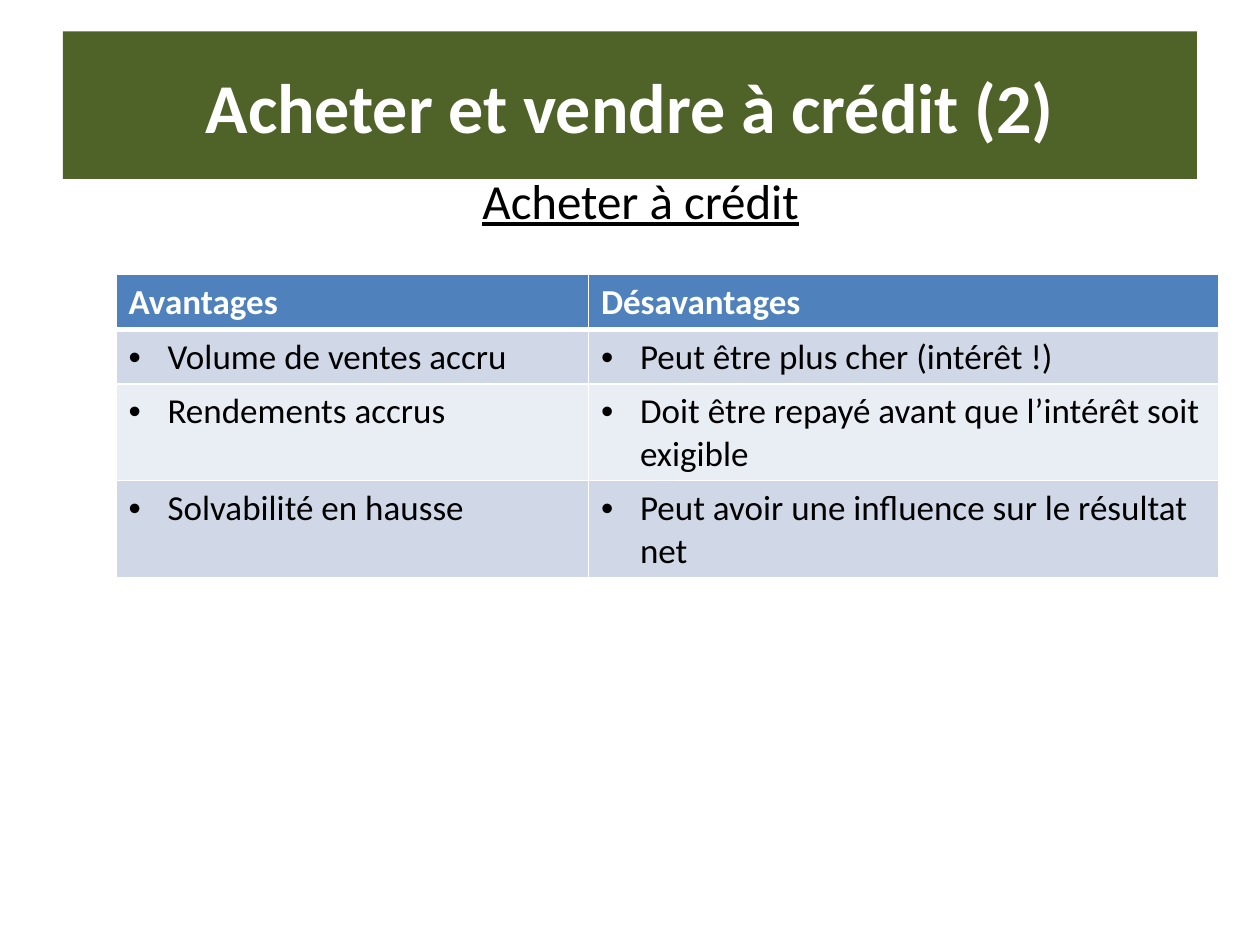
"""Build the slide on the advantages and drawbacks of buying on credit."""
from lxml import etree
from pptx import Presentation
from pptx.dml.color import RGBColor
from pptx.enum import shapes, text
from pptx.oxml import ns
from pptx.util import Inches, Pt

COLORS = {
    "banner": "4F6228",
    "header": "4F81BD",
    "odd": "D0D8E8",
    "even": "E9EDF4",
    "white": "FFFFFF",
    "black": "000000",
}
CREDIT_ROWS = [
    ("Avantages", "Désavantages"),
    ("Volume de ventes accru", "Peut être plus cher (intérêt !)"),
    ("Rendements accrus", "Doit être repayé avant que l’intérêt soit exigible"),
    ("Solvabilité en hausse", "Peut avoir une influence sur le résultat net"),
]


def add_run(paragraph, wording, size, color, bold=False):
    run = paragraph.add_run()
    run.text = wording
    run.font.name = "Calibri"
    run.font.size = Pt(size)
    run.font.bold = bold
    run.font.color.rgb = RGBColor.from_string(COLORS[color])
    return run


def add_border(cell, side, width):
    line = etree.SubElement(cell._tc.get_or_add_tcPr(), ns.qn(f"a:ln{side}"), w=str(Pt(width)))
    fill = etree.SubElement(line, ns.qn("a:solidFill"))
    etree.SubElement(fill, ns.qn("a:srgbClr"), val=COLORS["white"])


prs = Presentation()
prs.slide_width, prs.slide_height = Inches(10), Inches(7.5)
slide = prs.slides.add_slide(prs.slide_layouts[6])

banner = slide.shapes.add_shape(
    shapes.MSO_SHAPE.RECTANGLE, Inches(0.5), Inches(0.25), Inches(9), Inches(1.17)
)
banner.shadow.inherit = False
banner.fill.solid()
banner.fill.fore_color.rgb = RGBColor.from_string(COLORS["banner"])
banner.line.fill.background()
banner.text_frame.vertical_anchor = text.MSO_ANCHOR.MIDDLE
title = banner.text_frame.paragraphs[0]
title.alignment = text.PP_ALIGN.CENTER
add_run(title, "Acheter et vendre à crédit (2)", 40, "white", bold=True)

body = slide.shapes.add_textbox(Inches(0.5), Inches(1.3), Inches(9.17), Inches(5.62))
body.text_frame.word_wrap = True
subtitle = body.text_frame.paragraphs[0]
subtitle.alignment = text.PP_ALIGN.CENTER
add_run(subtitle, "Acheter à crédit", 28, "black").font.underline = True

credit_table = slide.shapes.add_table(
    len(CREDIT_ROWS), 2, Inches(0.92), Inches(2.18), Inches(8.75), Inches(1.64)
).table
for column, width in zip(credit_table.columns, (3.75, 5)):
    column.width = Inches(width)

for row, wordings in enumerate(CREDIT_ROWS):
    is_header = row == 0
    band = "header" if is_header else "odd" if row % 2 else "even"
    credit_table.rows[row].height = Inches(0.41)
    for col, wording in enumerate(wordings):
        cell = credit_table.cell(row, col)
        borders = {"L": 1, "R": 1, "T": 3 if row == 1 else 1, "B": 3 if is_header else 1}
        for side, width in borders.items():
            add_border(cell, side, width)
        cell.fill.solid()
        cell.fill.fore_color.rgb = RGBColor.from_string(COLORS[band])
        entry = cell.text_frame.paragraphs[0]
        if not is_header:
            properties = entry._p.get_or_add_pPr()
            properties.set("marL", str(Inches(0.31)))
            properties.set("indent", str(Inches(-0.31)))
            etree.SubElement(properties, ns.qn("a:buFont"), typeface="Arial")
            etree.SubElement(properties, ns.qn("a:buChar"), char="•")
        add_run(entry, wording, 20, "white" if is_header else "black", bold=is_header)

prs.save("out.pptx")
